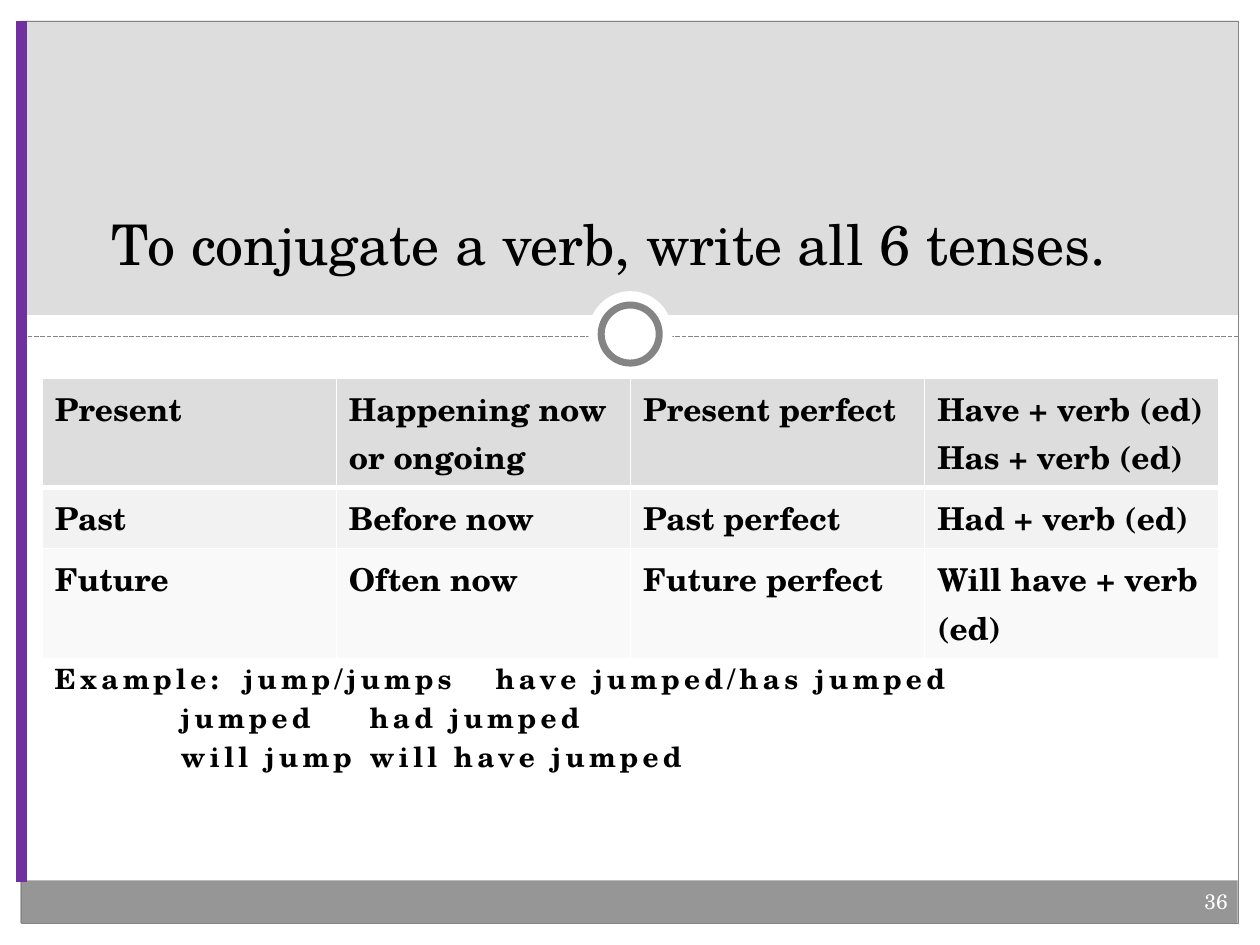
from lxml.etree import SubElement
from pptx import Presentation
from pptx.dml.color import RGBColor
from pptx.enum.dml import MSO_LINE
from pptx.enum.shapes import MSO_CONNECTOR, MSO_SHAPE
from pptx.enum.text import MSO_ANCHOR, PP_ALIGN
from pptx.oxml.ns import qn
from pptx.util import Cm, Pt

FONT = "TeX Gyre Schola"
WHITE, GREY, BLACK = "FFFFFF", "848484", "000000"


def color(code):
    return RGBColor.from_string(code)


def write(frame, lines, paragraph_format, font_format, ink):
    """Fill a text frame with one paragraph per line."""
    frame.word_wrap = True
    for index, line in enumerate(lines):
        para = frame.add_paragraph() if index else frame.paragraphs[0]
        for name, value in paragraph_format.items():
            setattr(para, name, value)
        span = para.add_run()
        span.text = line
        for name, value in font_format.items():
            setattr(span.font, name, value)
        span.font.name = FONT
        span.font.color.rgb = color(ink)


deck = Presentation()
deck.slide_width, deck.slide_height = Cm(25.4), Cm(19.05)
page = deck.slides.add_slide(deck.slide_layouts[6])

# Background bands and page frame: left, top, width, height, fill, line
bands = [
    (0, 18.62, 25.4, 0.43, WHITE, None),
    (0, 0, 25.4, 0.43, WHITE, None),
    (24.97, 0, 0.43, 19.05, WHITE, None),
    (0.43, 6.35, 24.54, 0.84, WHITE, None),
    (0.43, 0.41, 24.54, 5.94, "DDDDDD", None),
    (0.41, 17.75, 24.54, 0.86, "969696", None),
    (0.43, 0.43, 24.54, 18.19, None, 0.75),
]
# Ring on the divider
rings = [
    (11.86, 5.87, 1.7, 1.7, WHITE, None),
    (12.12, 6.15, 1.17, 1.17, WHITE, 4),
]
# Lines: start x, start y, end x, end y, colour, width, dash
divider = (0.43, 6.78, 24.97, 6.78, GREY, 0.9, MSO_LINE.SQUARE_DOT)
side_bar = (0.43, 0.43, 0.43, 17.78, "7030A0", 6, None)

layers = [(MSO_SHAPE.RECTANGLE, band) for band in bands]
layers.append((None, divider))
layers += [(MSO_SHAPE.OVAL, ring) for ring in rings]
layers.append((None, side_bar))

for kind, values in layers:
    lengths = [Cm(value) for value in values[:4]]
    if kind is None:
        ink, width, dash = values[4:]
        line = page.shapes.add_connector(MSO_CONNECTOR.STRAIGHT, *lengths)
        line.line.color.rgb = color(ink)
        line.line.width = Pt(width)
        if dash:
            line.line.dash_style = dash
        SubElement(line._element.spPr, qn("a:effectLst"))
        continue
    fill, width = values[4:]
    shape = page.shapes.add_shape(kind, *lengths)
    shape.shadow.inherit = False
    if fill:
        shape.fill.solid()
        shape.fill.fore_color.rgb = color(fill)
    else:
        shape.fill.background()
    if width:
        shape.line.color.rgb = color(GREY)
        shape.line.width = Pt(width)
    else:
        shape.line.fill.background()

# Title
title = page.shapes.add_textbox(Cm(2), Cm(1.47), Cm(21.59), Cm(4.24))
title.text_frame.vertical_anchor = MSO_ANCHOR.BOTTOM
write(title.text_frame, ["To conjugate a verb, write all 6 tenses."],
      {}, {"size": Pt(32)}, BLACK)

# Example forms, aligned on the default tab stops
examples = [
    "Example: \tjump/jumps\thave jumped/has jumped",
    "\t\tjumped\thad jumped",
    "\t\twill jump\twill have jumped",
]
example_box = page.shapes.add_textbox(Cm(0.85), Cm(13.1), Cm(23.7), Cm(4.25))
write(example_box.text_frame, examples, {"line_spacing": Pt(22.3)},
      {"size": Pt(16), "bold": True}, BLACK)
for para in example_box.text_frame.paragraphs:
    for span in para.runs:
        span.font._element.set("spc", "250")

# Page number
number_box = page.shapes.add_textbox(Cm(15.04), Cm(17.78), Cm(9.96), Cm(1.02))
write(number_box.text_frame, ["36"], {"alignment": PP_ALIGN.RIGHT},
      {"size": Pt(12)}, WHITE)

# Table of tenses: row height, fill, cells
tenses = [
    (2.2, "DDDDDD", ["Present", "Happening now or ongoing", "Present perfect",
                     "Have + verb (ed)\nHas + verb (ed)"]),
    (0.9, "F2F2F2", ["Past", "Before now", "Past perfect", "Had + verb (ed)"]),
    (1.55, "F9F9F9", ["Future", "Often now", "Future perfect",
                      "Will have + verb (ed)"]),
]
table = page.shapes.add_table(3, 4, Cm(0.85), Cm(7.62), Cm(23.7), Cm(4.65)).table
for column in table.columns:
    column.width = Cm(5.93)
for row, (height, fill, texts) in enumerate(tenses):
    table.rows[row].height = Cm(height)
    for column, text in enumerate(texts):
        cell = table.cell(row, column)
        write(cell.text_frame, text.split("\n"), {"line_spacing": Pt(27.7)},
              {"size": Pt(18), "bold": True}, BLACK)
        # White borders, heavier under the first row
        weights = {"lnL": 1, "lnR": 1, "lnT": 3 if row == 1 else 1,
                   "lnB": 3 if row == 0 else 1}
        for side, weight in weights.items():
            border = SubElement(cell._tc.get_or_add_tcPr(), qn("a:" + side),
                                w=str(Pt(weight)))
            paint = SubElement(border, qn("a:solidFill"))
            SubElement(paint, qn("a:srgbClr"), val=WHITE)
        cell.fill.solid()
        cell.fill.fore_color.rgb = color(fill)

deck.save("out.pptx")
